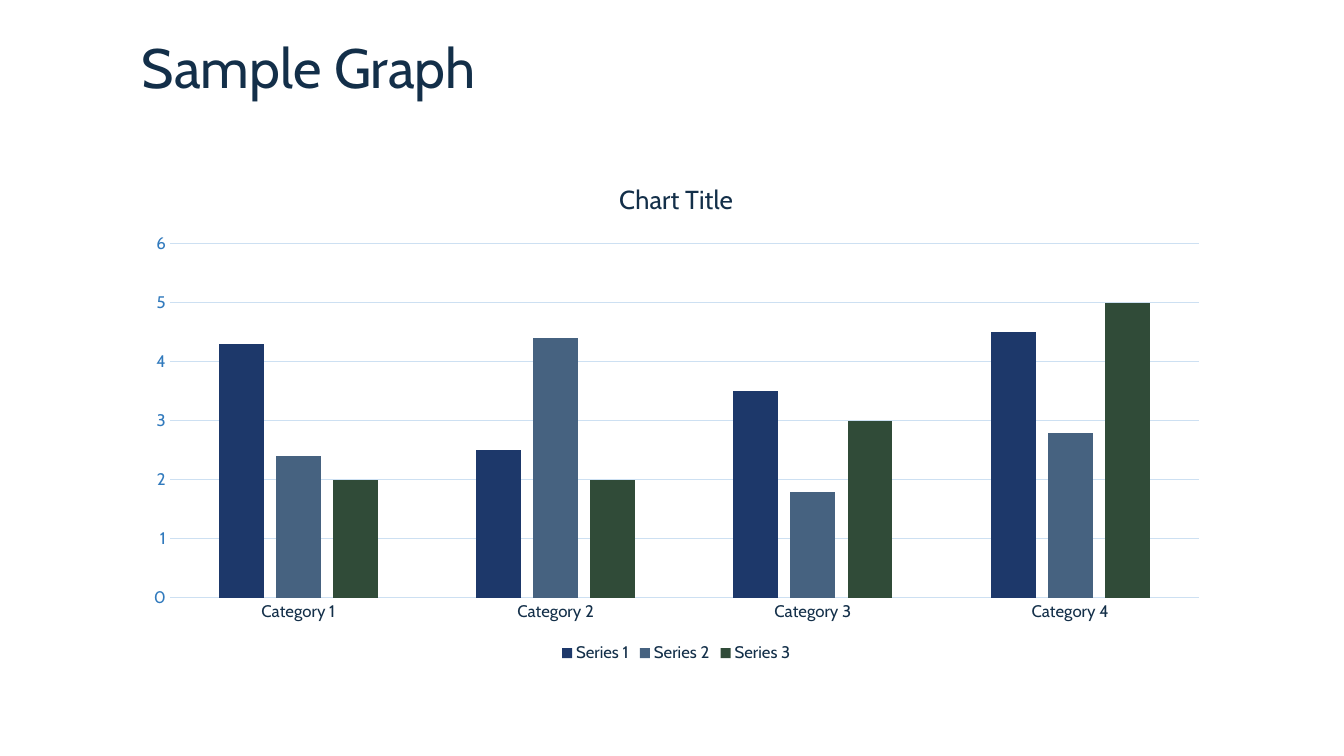
from typing import NamedTuple

from pptx import Presentation
from pptx.chart.axis import CategoryAxis, ValueAxis
from pptx.chart.chart import Chart
from pptx.chart.data import CategoryChartData
from pptx.dml.color import RGBColor
from pptx.dml.line import LineFormat
from pptx.enum.chart import XL_CHART_TYPE as ChartType
from pptx.enum.chart import XL_LEGEND_POSITION as LegendPosition
from pptx.enum.chart import XL_TICK_MARK as TickMark
from pptx.enum.text import MSO_ANCHOR as Anchor
from pptx.slide import Slide
from pptx.text.text import Font
from pptx.util import Pt

NAVY = RGBColor(0x13, 0x2F, 0x49)
BLUE = RGBColor(0x31, 0x7A, 0xBD)
PALE_BLUE = RGBColor(0xCD, 0xE0, 0xF2)
TYPEFACE = "Cabin"
LEFT = Pt(94.3)
WIDTH = Pt(777.6)
CATEGORIES = [f"Category {number}" for number in range(1, 5)]


class Series(NamedTuple):
    name: str
    values: tuple[float, ...]
    color: RGBColor


SERIES = (
    Series("Series 1", (4.3, 2.5, 3.5, 4.5), RGBColor(0x1D, 0x38, 0x6A)),
    Series("Series 2", (2.4, 4.4, 1.8, 2.8), RGBColor(0x46, 0x62, 0x80)),
    Series("Series 3", (2, 2, 3, 5), RGBColor(0x30, 0x4B, 0x38)),
)


def set_font(font: Font, size: float, color: RGBColor = NAVY) -> None:
    font.name = TYPEFACE
    font.size = Pt(size)
    font.bold = False
    font.color.rgb = color


def set_line(line: LineFormat) -> None:
    line.color.rgb = PALE_BLUE
    line.width = Pt(0.75)


def style_axis(axis: CategoryAxis | ValueAxis, color: RGBColor) -> None:
    axis.major_tick_mark = TickMark.NONE
    axis.minor_tick_mark = TickMark.NONE
    set_font(axis.tick_labels.font, 12, color)


def add_title(slide: Slide) -> None:
    frame = slide.shapes.add_textbox(LEFT, Pt(28.8), WIDTH, Pt(43.2)).text_frame
    frame.word_wrap = True
    frame.vertical_anchor = Anchor.MIDDLE
    paragraph = frame.paragraphs[0]
    paragraph.text = "Sample Graph"
    paragraph.line_spacing = 0.9
    set_font(paragraph.font, 39.6)


def style_axes(chart: Chart) -> None:
    style_axis(chart.category_axis, NAVY)
    set_line(chart.category_axis.format.line)
    value_axis = chart.value_axis
    style_axis(value_axis, BLUE)
    value_axis.minimum_scale = 0
    value_axis.maximum_scale = 6
    value_axis.major_unit = 1
    value_axis.format.line.fill.background()
    value_axis.has_major_gridlines = True
    set_line(value_axis.major_gridlines.format.line)


def add_column_chart(slide: Slide) -> None:
    data = CategoryChartData()
    data.categories = CATEGORIES
    for series in SERIES:
        data.add_series(series.name, series.values)
    chart = slide.shapes.add_chart(
        ChartType.COLUMN_CLUSTERED, LEFT, Pt(115.2), WIDTH, Pt(361.4), data
    ).chart
    set_font(chart.font, 10)

    chart.has_title = True
    title = chart.chart_title
    title.include_in_layout = False
    paragraph = title.text_frame.paragraphs[0]
    paragraph.text = "Chart Title"
    set_font(paragraph.font, 18.6)

    chart.has_legend = True
    chart.legend.position = LegendPosition.BOTTOM
    chart.legend.include_in_layout = False
    set_font(chart.legend.font, 12)

    style_axes(chart)
    plot = chart.plots[0]
    plot.gap_width = 219
    plot.overlap = -27
    plot.vary_by_categories = False
    for columns, series in zip(plot.series, SERIES):
        columns.format.fill.solid()
        columns.format.fill.fore_color.rgb = series.color


def main() -> None:
    presentation = Presentation()
    presentation.slide_width = Pt(960)
    presentation.slide_height = Pt(540)
    slide = presentation.slides.add_slide(presentation.slide_layouts[6])
    add_title(slide)
    add_column_chart(slide)
    presentation.save("out.pptx")


if __name__ == "__main__":
    main()
